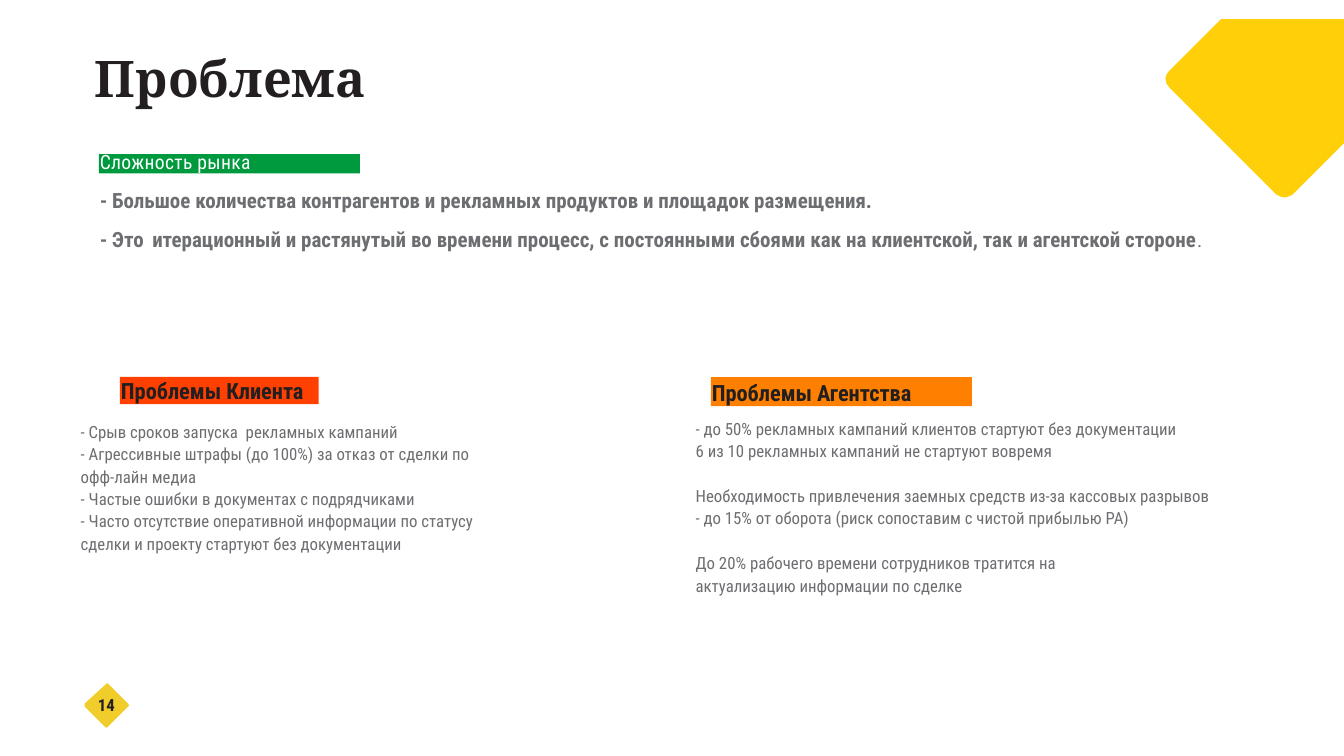
from pptx import Presentation
from pptx.dml.color import RGBColor
from pptx.enum.shapes import MSO_SHAPE as SHAPE
from pptx.enum.text import MSO_ANCHOR as ANCHOR, PP_ALIGN as ALIGN
from pptx.util import Inches, Pt

YELLOW = RGBColor(0xFF, 0xD0, 0x0A)
GOLD = RGBColor(0xF0, 0xCD, 0x2B)
GREEN = RGBColor(0x00, 0x9A, 0x3E)
RED = RGBColor(0xFF, 0x40, 0x00)
ORANGE = RGBColor(0xFF, 0x80, 0x00)
WHITE = RGBColor(0xFF, 0xFF, 0xFF)
BLACK = RGBColor(0x23, 0x1F, 0x20)
GREY = RGBColor(0x6D, 0x6E, 0x71)
BODY_FONT = "Roboto Condensed"

prs = Presentation()
prs.slide_width, prs.slide_height = Inches(13.33), Inches(7.5)
COL, ROW = prs.slide_width / 100, prs.slide_height / 100  # 100 x 100 grid
slide = prs.slides.add_slide(prs.slide_layouts[5])


def style_run(r, size, color, bold, name=BODY_FONT):
    r.font.name, r.font.size, r.font.bold = name, Pt(size), bold
    r.font.color.rgb = color


def setup_frame(tf, top=0, indent=0.01):
    """Remove the margins, wrap the text and start it at the top left."""
    tf.word_wrap = True
    tf.vertical_anchor = ANCHOR.TOP
    tf.margin_left = Inches(indent)
    tf.margin_right = tf.margin_bottom = 0
    tf.margin_top = Inches(top)
    for p in tf.paragraphs:
        p.alignment = ALIGN.LEFT


# Title
title = slide.shapes.title
title.left, title.top = int(6.98 * COL), int(6 * ROW)
title.width, title.height = int(75 * COL), int(16.8 * ROW)
title.text_frame.text = "Проблема"
setup_frame(title.text_frame, top=0.02)
style_run(title.text_frame.paragraphs[0].runs[0], 36, BLACK, True, "Cambria")

# Rounded diamonds, outlines in hundredths of an inch
badge = [(106, 678), (84, 698), (84, 701), (104, 721), (106, 722),
         (107, 721), (127, 701), (128, 700), (127, 698), (107, 678)]
corner = [(1333, 19), (1211, 19), (1160, 70), (1157, 74), (1156, 78),
          (1157, 83), (1160, 87), (1266, 193), (1270, 195), (1274, 196),
          (1278, 195), (1282, 193), (1333, 142)]
for points, color in ((badge, GOLD), (corner, YELLOW)):
    outline = slide.shapes.build_freeform(*points[0], scale=Inches(0.01))
    outline.add_line_segments(points[1:], close=True)
    sp = outline.convert_to_shape()
    sp.shadow.inherit = False
    sp.fill.solid()
    sp.fill.fore_color.rgb = color
    sp.line.fill.background()

# Coloured headings: column, row, columns, rows, fill, text, size, colour, bold, top margin
headings = [
    (7.35, 20.4, 19.43, 2.53, GREEN, "Сложность рынка", 14, WHITE, False, 0.02),
    (8.93, 49.87, 14.78, 3.6, RED, "Проблемы Клиента", 16, BLACK, True, 0),
    (52.89, 49.87, 19.43, 3.87, ORANGE, "Проблемы Агентства", 16, BLACK, True, 0.02),
]
for x, y, w, h, fill, text, size, color, bold, top in headings:
    sp = slide.shapes.add_shape(SHAPE.RECTANGLE, int(x * COL), int(y * ROW),
                                int(w * COL), int(h * ROW))
    sp.shadow.inherit = False
    sp.fill.solid()
    sp.fill.fore_color.rgb = fill
    sp.line.fill.background()
    sp.text_frame.text = text
    setup_frame(sp.text_frame, top)
    p = sp.text_frame.paragraphs[0]
    style_run(p.runs[0], size, color, bold)
    if fill == GREEN:
        p.line_spacing = Pt(12)
        p.runs[0]._r.get_or_add_rPr().set("spc", "20")

# Text blocks: a paragraph is a list of (text, size, bold) runs
market = [
    [("- Большое количества контрагентов и рекламных продуктов и площадок размещения.", 15, True)],
    [("- Это", 15, True), (" ", 26, True),
     ("итерационный и растянутый во времени процесс, с постоянными сбоями "
      "как на клиентской, так и агентской стороне", 15, True),
     (".", 14, False)],
]
client = [[(text, 12, False)] for text in (
    "- Срыв сроков запуска  рекламных кампаний",
    "- Агрессивные штрафы (до 100%) за отказ от сделки по офф-лайн медиа",
    "- Частые ошибки в документах с подрядчиками",
    "- Часто отсутствие оперативной информации по статусу сделки и проекту "
    "стартуют без документации",
)]
agency = [[(text, 12, False)] for text in (
    "- до 50% рекламных кампаний клиентов стартуют без документации",
    "6 из 10 рекламных кампаний не стартуют вовремя",
    "Необходимость привлечения заемных средств из-за кассовых разрывов",
    "- до 15% от оборота (риск сопоставим с чистой прибылью РА)",
    "До 20% рабочего времени сотрудников тратится на",
    "актуализацию информации по сделке",
)]
page = [[("14", 12, True)]]

# column, row, columns, rows, paragraphs, colour, top margin, indent, paragraphs after a gap
blocks = [
    (7.35, 25.07, 82.67, 12, market, GREY, 0.01, 0.01, [1]),
    (5.93, 55.07, 30.98, 24, client, GREY, 0.03, 0.01, []),
    (51.69, 55.07, 42.76, 23.73, agency, GREY, 0, 0.01, [2, 4]),
    (6.98, 91.87, 2.1, 2.67, page, BLACK, 0, 0.04, []),
]
for x, y, w, h, paragraphs, color, top, indent, gaps in blocks:
    box = slide.shapes.add_textbox(int(x * COL), int(y * ROW), int(w * COL), int(h * ROW))
    tf = box.text_frame
    for i, runs in enumerate(paragraphs):
        p = tf.add_paragraph() if i else tf.paragraphs[0]
        if paragraphs is not page:
            p.line_spacing = Pt(16)
        if i in gaps:
            p.space_before = Pt(14 if paragraphs is market else 16)
        for text, size, bold in runs:
            r = p.add_run()
            r.text = text
            style_run(r, size, color, bold)
    setup_frame(tf, top, indent)

prs.save("out.pptx")
